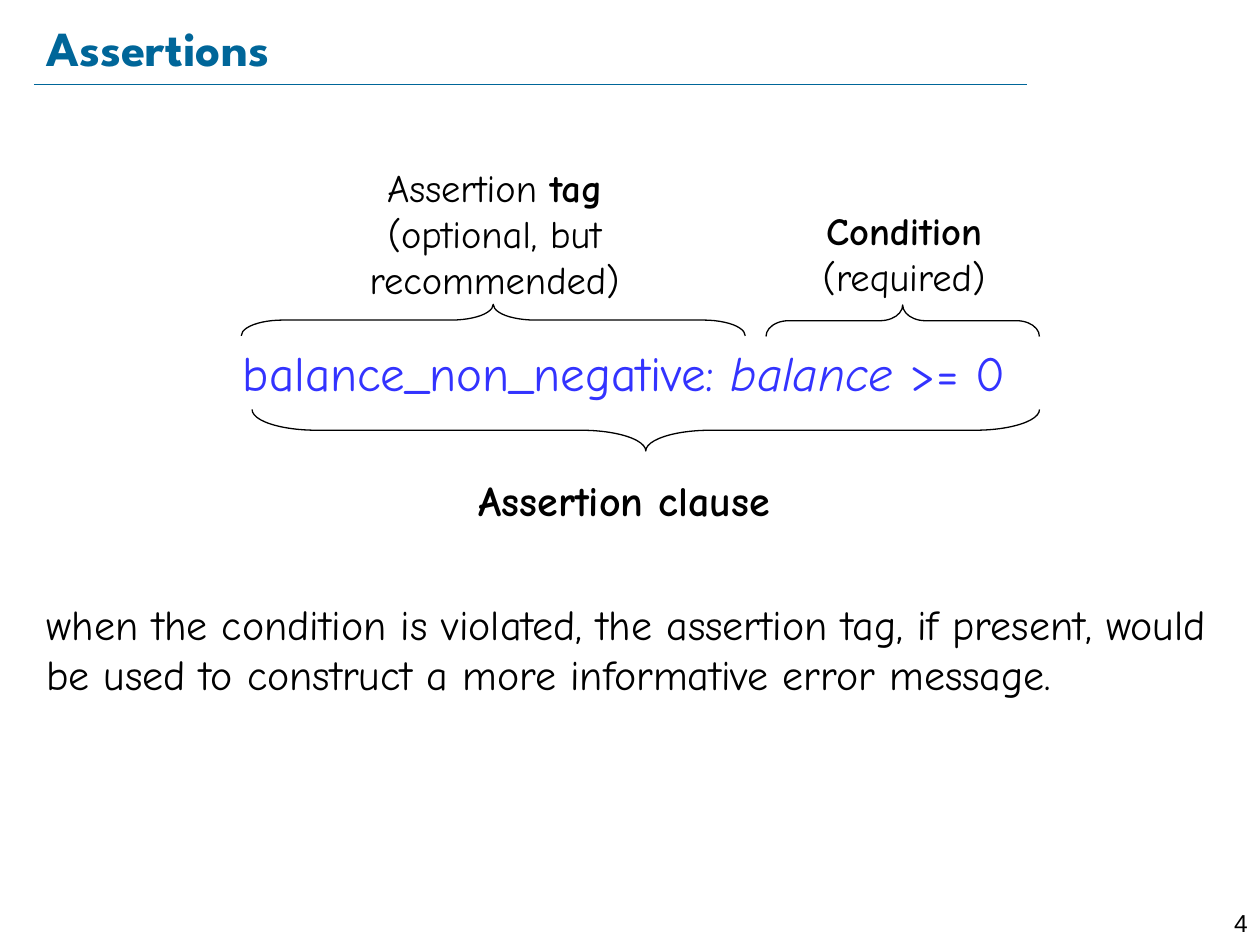
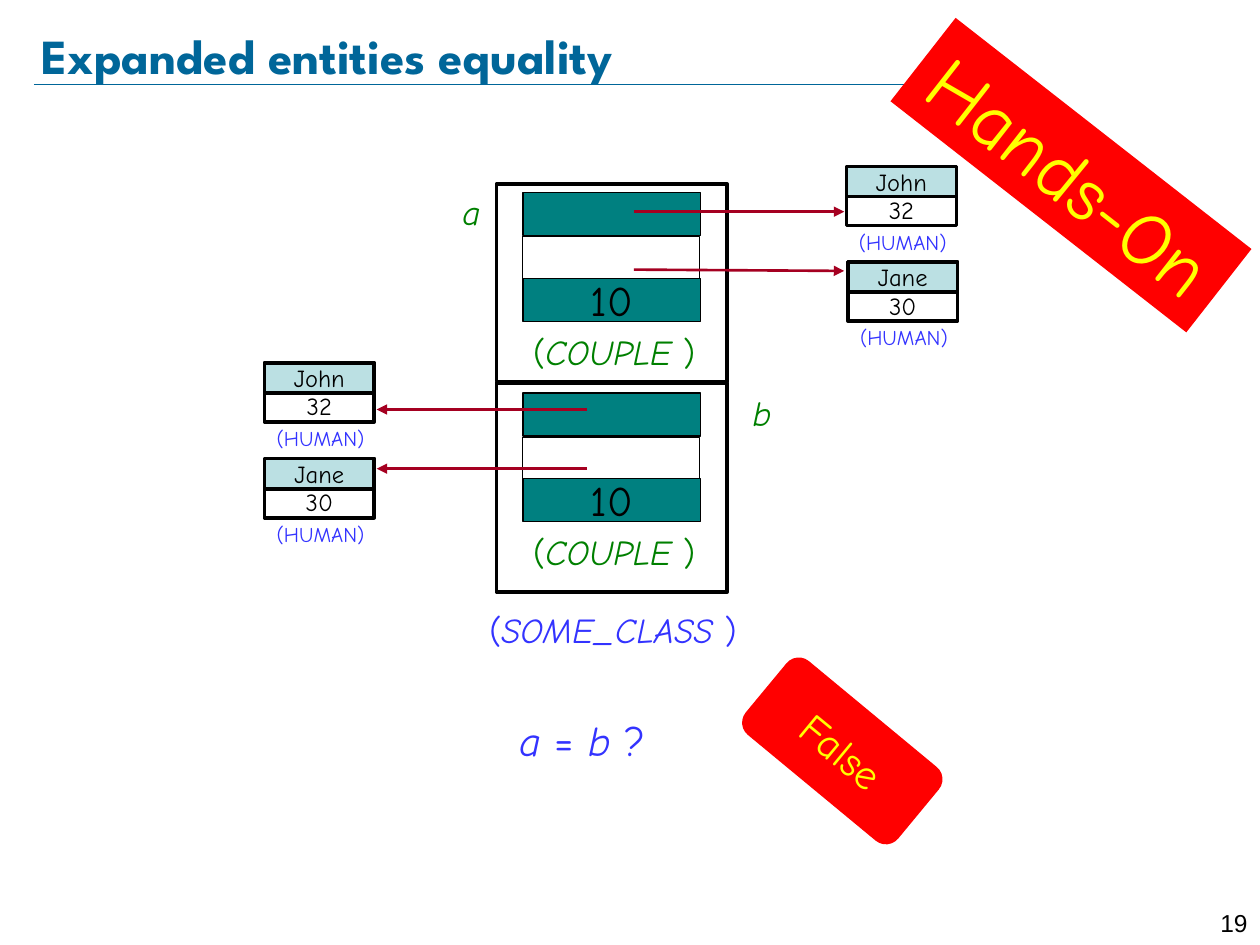
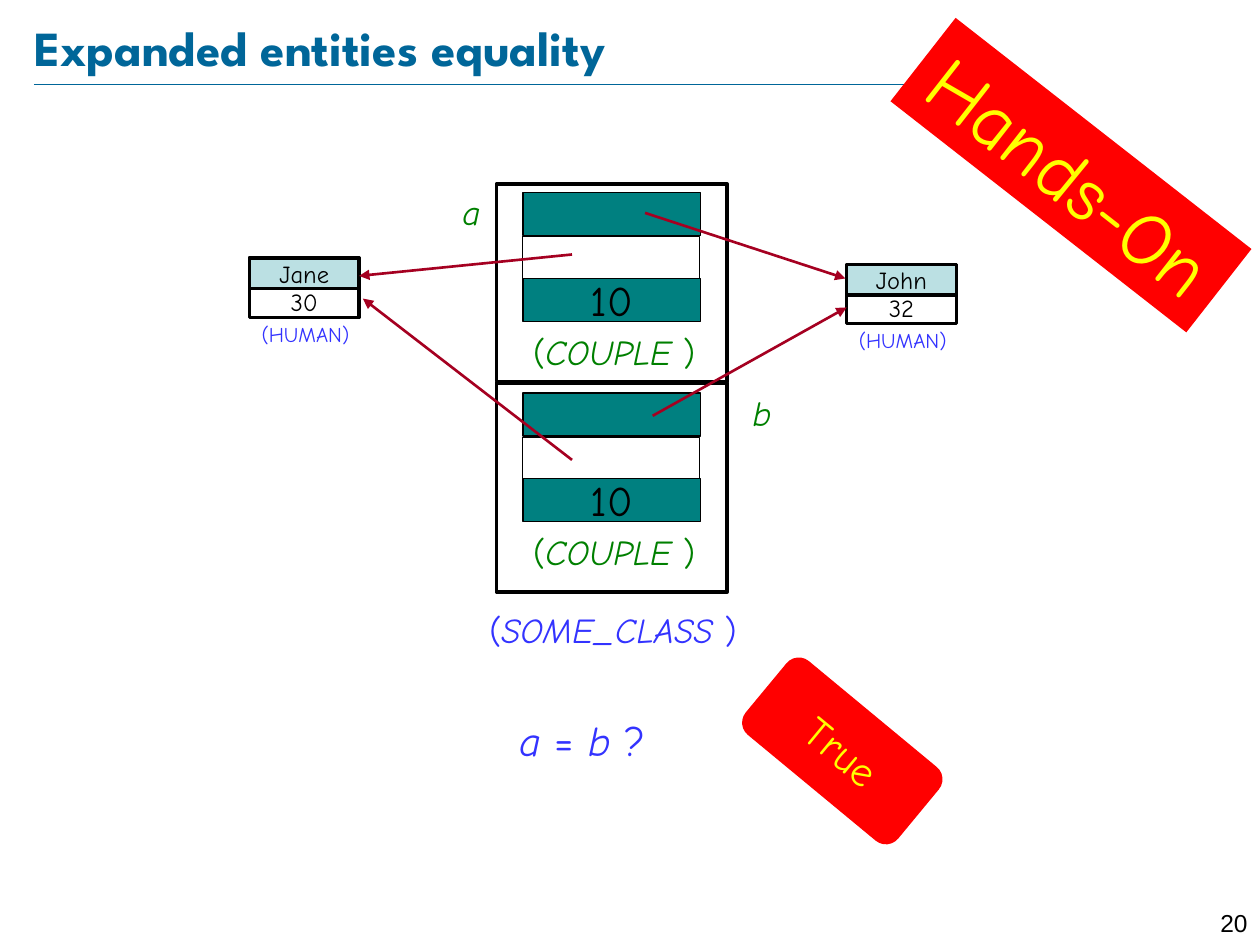
import lxml.etree
import pptx
import pptx.dml.color
import pptx.enum.shapes
import pptx.enum.text
import pptx.oxml.ns
import pptx.util

Inches = pptx.util.Inches
RGBColor = pptx.dml.color.RGBColor
SHAPE = pptx.enum.shapes.MSO_SHAPE
ALIGN = pptx.enum.text.PP_ALIGN
ANCHOR = pptx.enum.text.MSO_ANCHOR
qn = pptx.oxml.ns.qn

BLACK = RGBColor(0x00, 0x00, 0x00)
WHITE = RGBColor(0xFF, 0xFF, 0xFF)
PETROL = RGBColor(0x00, 0x66, 0x99)
BLUE = RGBColor(0x33, 0x33, 0xFF)
GREEN = RGBColor(0x00, 0x80, 0x00)
TEAL = RGBColor(0x00, 0x80, 0x80)
PALE_BLUE = RGBColor(0xBB, 0xE0, 0xE3)
RED = RGBColor(0xFF, 0x00, 0x00)
YELLOW = RGBColor(0xFF, 0xFF, 0x00)
CRIMSON = RGBColor(0xA5, 0x00, 0x21)

BODY_FONT = "Comic Neue"
TITLE_FONT = "League Spartan"
NUMBER_FONT = "Arial"

BOLD = {"bold": True}
ITALIC = {"italic": True}
PLAIN = {}


def write(shape, text, size=24, color=BLACK, font=BODY_FONT, bold=False,
          align=ALIGN.LEFT, anchor=ANCHOR.TOP, wrap=True,
          margins=(0.1, 0.05, 0.1, 0.05)):
    frame = shape.text_frame
    frame.word_wrap = wrap
    frame.vertical_anchor = anchor
    (frame.margin_left, frame.margin_top,
     frame.margin_right, frame.margin_bottom) = map(Inches, margins)
    paragraph = frame.paragraphs[0]
    paragraph.alignment = align
    pieces = [(text, PLAIN)] if isinstance(text, str) else text
    for words, emphasis in pieces:
        run = paragraph.add_run()
        run.text = words
        run.font.name = font
        run.font.size = pptx.util.Pt(size)
        run.font.color.rgb = color
        run.font.bold = emphasis.get("bold", bold)
        run.font.italic = emphasis.get("italic", False)


def class_name(name):
    return [("(", PLAIN), (name + " ", ITALIC), (")", PLAIN)]


class Deck:
    def __init__(self):
        self.presentation = pptx.Presentation()
        self.presentation.slide_width = Inches(10)
        self.presentation.slide_height = Inches(7.5)
        self.slide = None

    def start(self, title, number, title_box=(0.27, 0.13, 8.69, 0.48),
              title_margins=(0, 0, 0, 0)):
        layout = self.presentation.slide_layouts[6]
        self.slide = self.presentation.slides.add_slide(layout)
        self.line((0.27, 0.67), (8.15, 0.67), PETROL, 0.25)
        self.text((9.45, 7.16, 0.55, 0.24), str(number), size=14,
                  font=NUMBER_FONT, align=ALIGN.RIGHT)
        self.text(title_box, title, size=28, color=PETROL, font=TITLE_FONT,
                  bold=True, anchor=ANCHOR.MIDDLE, margins=title_margins)

    def text(self, box, text, **style):
        write(self.slide.shapes.add_textbox(*map(Inches, box)), text, **style)

    def shape(self, box, kind=SHAPE.RECTANGLE, fill=None, outline=None,
              rotation=0, text=None, **style):
        shape = self.slide.shapes.add_shape(kind, *map(Inches, box))
        shape.shadow.inherit = False
        shape.rotation = rotation
        if fill is None:
            shape.fill.background()
        else:
            shape.fill.solid()
            shape.fill.fore_color.rgb = fill
        if outline is None:
            shape.line.fill.background()
        else:
            shape.line.color.rgb = BLACK
            shape.line.width = pptx.util.Pt(outline)
        if text:
            write(shape, text, **style)
        return shape

    def line(self, start, end, color, width, arrow=False):
        connector = self.slide.shapes.add_connector(
            pptx.enum.shapes.MSO_CONNECTOR.STRAIGHT,
            *map(Inches, start + end))
        connector.line.color.rgb = color
        connector.line.width = pptx.util.Pt(width)
        properties = connector._element.spPr
        if arrow:
            lxml.etree.SubElement(properties.find(qn("a:ln")),
                                  qn("a:tailEnd"), type="triangle")
        lxml.etree.SubElement(properties, qn("a:effectLst"))

    def brace(self, box, rotation, curl):
        brace = self.shape(box, SHAPE.RIGHT_BRACE, outline=0.75,
                           rotation=rotation)
        brace.adjustments[0] = curl

    def human(self, left, top, name, age):
        self.text((left - 0.07, top + 0.45, 1.03, 0.31), "(HUMAN)", size=12,
                  color=BLUE, align=ALIGN.CENTER)
        self.shape((left, top, 0.87, 0.47), fill=WHITE, outline=2,
                   text=str(age), size=14, align=ALIGN.CENTER, wrap=False,
                   anchor=ANCHOR.BOTTOM, margins=(0.1, 0.05, 0.1, 0.01))
        self.shape((left, top, 0.87, 0.24), fill=PALE_BLUE, outline=2,
                   text=name, size=14, align=ALIGN.CENTER,
                   anchor=ANCHOR.MIDDLE)

    def couple(self, top):
        self.shape((4.15, top, 1.41, 0.34), fill=TEAL, outline=0.75)
        self.shape((4.15, top + 0.35, 1.4, 0.33), fill=WHITE, outline=0.75)
        self.text((4.02, top + 1.04, 1.71, 0.44), class_name("COUPLE"),
                  size=20, color=GREEN, align=ALIGN.CENTER)
        self.shape((4.15, top + 0.68, 1.41, 0.34), fill=TEAL, outline=0.75,
                   text="10", align=ALIGN.CENTER, anchor=ANCHOR.MIDDLE,
                   wrap=False)

    def equality(self, humans, references, answer):
        for top, height in ((1.46, 1.57), (3.04, 1.66)):
            self.shape((3.94, top, 1.83, height), fill=WHITE, outline=2)
        self.text((3.59, 4.78, 2.55, 0.44), class_name("SOME_CLASS"),
                  size=20, color=BLUE, align=ALIGN.CENTER)
        for entity, left, top in (("a", 3.47, 1.46), ("b", 5.78, 3.06)):
            self.text((left, top, 0.44, 0.44), [(entity, ITALIC)], size=20,
                      color=GREEN, align=ALIGN.RIGHT)
        for human in humans:
            self.human(*human)
        self.text((0, 5.62, 10, 0.55),
                  [("a", ITALIC), (" = ", PLAIN), ("b", ITALIC),
                   (" ?", PLAIN)],
                  color=BLUE, margins=(4.12, 0.05, 0.1, 0.05))
        self.shape((5.9, 5.58, 1.57, 0.76), SHAPE.ROUNDED_RECTANGLE,
                   fill=RED, rotation=39.6, text=answer, color=YELLOW,
                   align=ALIGN.CENTER, anchor=ANCHOR.MIDDLE)
        self.shape((7.01, 0.97, 2.98, 0.84), fill=RED, rotation=38,
                   text="Hands-On", size=44, color=YELLOW,
                   align=ALIGN.CENTER, wrap=False)
        for top in (1.53, 3.12):
            self.couple(top)
        for start, end in references:
            self.line(start, end, CRIMSON, 1.5, arrow=True)


def assertions(deck):
    deck.start("Assertions", 4, title_margins=(0.1, 0.05, 0.1, 0.05))
    deck.text((0.27, 0.96, 9.4, 6.17),
              "when the condition is violated, the assertion tag, if present, "
              "would be used to construct a more informative error message.",
              margins=(0.1, 3.79, 0.1, 0.05))
    deck.brace((4.96, 0.29, 0.33, 6.25), 90, 1.56)
    deck.text((1.83, 2.67, 6.63, 0.57),
              [("balance_non_negative: ", PLAIN), ("balance", ITALIC),
               (" >= 0", PLAIN)], size=28, color=BLUE)
    deck.text((3.7, 3.72, 2.85, 0.51), "Assertion clause", bold=True)
    deck.brace((3.79, 0.54, 0.25, 4), 270, 1.33)
    deck.text((2.45, 1.25, 2.95, 1.21),
              [("Assertion ", PLAIN), ("tag ", BOLD),
               ("(optional, but recommended)", PLAIN)],
              size=22, align=ALIGN.CENTER)
    deck.brace((7.04, 1.46, 0.25, 2.17), 270, 0.72)
    deck.text((6.3, 1.59, 1.75, 0.84),
              [("Condition", BOLD), (" (required)", PLAIN)],
              size=22, align=ALIGN.CENTER)


def separate_humans(deck):
    deck.start("Expanded entities equality", 19, (0.33, 0.2, 8.28, 0.47))
    deck.equality(
        humans=[(6.72, 1.32, "John", 32), (6.73, 2.08, "Jane", 30),
                (2.1, 2.88, "John", 32), (2.1, 3.64, "Jane", 30)],
        references=[((4.66, 3.25), (2.99, 3.25)),
                    ((4.66, 3.72), (2.99, 3.72)),
                    ((5.03, 1.68), (6.7, 1.68)),
                    ((5.03, 2.14), (6.7, 2.15))],
        answer="False")


def shared_humans(deck):
    deck.start("Expanded entities equality", 20)
    deck.equality(
        humans=[(6.72, 2.1, "John", 32), (1.98, 2.05, "Jane", 30)],
        references=[((5.12, 1.69), (6.71, 2.21)),
                    ((5.18, 3.3), (6.72, 2.44)),
                    ((4.54, 2.02), (2.85, 2.19)),
                    ((4.54, 3.65), (2.88, 2.37))],
        answer="True")


def main():
    deck = Deck()
    assertions(deck)
    separate_humans(deck)
    shared_humans(deck)
    deck.presentation.save("out.pptx")


if __name__ == "__main__":
    main()
